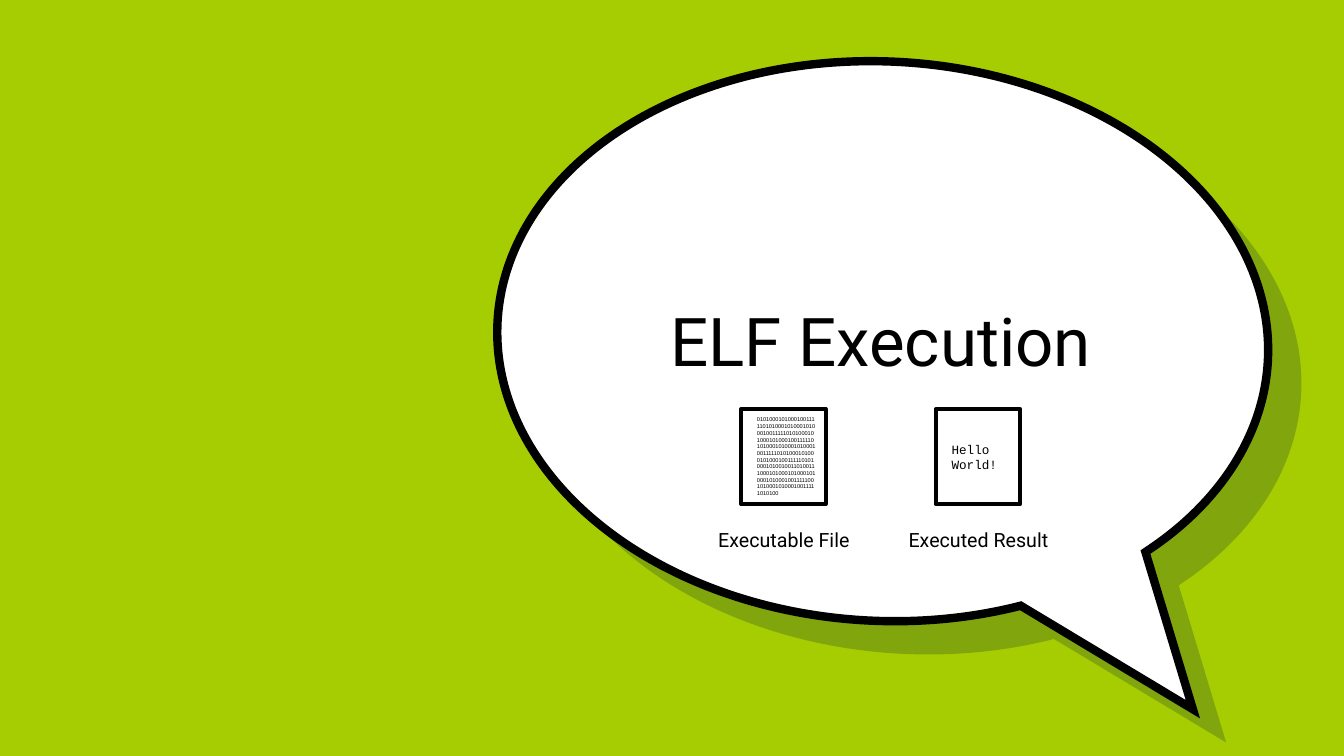
from lxml.etree import SubElement
from pptx import Presentation
from pptx.dml.color import RGBColor
from pptx.enum.shapes import MSO_SHAPE
from pptx.enum.text import MSO_ANCHOR, MSO_AUTO_SIZE, PP_ALIGN
from pptx.oxml.ns import qn
from pptx.util import Inches, Pt

COLORS = {"green": "A6CD02", "shade": "001936", "white": "FFFFFF", "black": "000000"}
BINARY = (
    "010100010100010011111010100010100010100010011111010100010100010100010011111010100010100010"
    "100010011111010100010100010100010011111010100010100100110100111000101000101000101000101000"
    "100111110010100010100010011111010100"
)
# Caption, caption left and width, frame left, frame text, text format
PANELS = [
    ("Executable File", 7.02, 1.51, 7.35, BINARY, {"name": "Arial", "size": Pt(4)}),
    ("Executed Result", 8.91, 1.59, 9.28, "Hello World!", {"name": "Courier New", "size": Pt(9)}),
]


def color(name):
    return RGBColor.from_string(COLORS[name])


def set_fill(shape, name, opacity=None):
    shape.fill.solid()
    shape.fill.fore_color.rgb = color(name)
    if opacity is not None:
        srgb = shape.fill._xPr.find(qn("a:solidFill")).find(qn("a:srgbClr"))
        SubElement(srgb, qn("a:alpha"), val=str(opacity * 1000))


def set_outline(shape, width, join):
    shape.line.color.rgb = color("black")
    shape.line.width = Pt(width)
    element = SubElement(shape.line._get_or_add_ln(), qn("a:" + join))
    if join == "miter":
        element.set("lim", "800000")


def write_text(shape, text, alignment, font_format, **frame_format):
    frame = shape.text_frame
    for name, value in frame_format.items():
        setattr(frame, name, value)
    para = frame.paragraphs[0]
    para.alignment = alignment
    span = para.add_run()
    span.text = text
    for name, value in font_format.items():
        setattr(span.font, name, value)
    span.font.color.rgb = color("black")
    return para


def add_bubble(page, left, top):
    bubble = page.shapes.add_shape(
        MSO_SHAPE.OVAL_CALLOUT, Inches(left), Inches(top), Inches(7.65), Inches(5.55))
    bubble.shadow.inherit = False
    bubble.rotation = 2.8
    bubble.adjustments[0] = 0.425
    bubble.adjustments[1] = 0.63
    return bubble


def add_title(page, text):
    title = page.shapes.title
    title.left, title.top = Inches(5.99), Inches(2.18)
    title.width, title.height = Inches(5.49), Inches(1.69)
    margins = {"margin_" + side: Inches(0.1) for side in ("left", "top", "right", "bottom")}
    write_text(title, text, PP_ALIGN.CENTER, {"name": "Roboto", "size": Pt(48)},
               vertical_anchor=MSO_ANCHOR.BOTTOM, auto_size=MSO_AUTO_SIZE.NONE,
               word_wrap=True, **margins)


def add_caption(page, text, left, width):
    box = page.shapes.add_textbox(Inches(left), Inches(5.19), Inches(width), Inches(0.34))
    write_text(box, text, PP_ALIGN.CENTER, {"name": "Roboto", "size": Pt(14)},
               word_wrap=False, auto_size=MSO_AUTO_SIZE.SHAPE_TO_FIT_TEXT)


def add_frame(page, text, left, font_format):
    box = page.shapes.add_shape(
        MSO_SHAPE.RECTANGLE, Inches(left), Inches(4.06), Inches(0.84), Inches(0.94))
    box.shadow.inherit = False
    set_fill(box, "white")
    set_outline(box, 3, "round")
    para = write_text(box, text, PP_ALIGN.LEFT, font_format,
                      vertical_anchor=MSO_ANCHOR.MIDDLE, word_wrap=True)
    properties = para._p.get_or_add_pPr()
    properties.set("marL", str(Inches(0.06)))
    properties.set("indent", "0")


def main():
    deck = Presentation()
    deck.slide_width, deck.slide_height = Inches(13.33), Inches(7.5)
    page = deck.slides.add_slide(deck.slide_layouts[5])
    page.background.fill.solid()
    page.background.fill.fore_color.rgb = color("green")

    # Speech bubble over its shade
    shade = add_bubble(page, 5.26, 0.94)
    set_fill(shade, "shade", opacity=22)
    shade.line.fill.background()
    bubble = add_bubble(page, 4.93, 0.61)
    set_fill(bubble, "white")
    set_outline(bubble, 6, "miter")

    # Title, moved in front of the bubble
    add_title(page, "ELF Execution")
    bubble._element.addnext(page.shapes.title._element)

    # Framed texts with captions
    for caption, caption_left, caption_width, frame_left, text, font_format in PANELS:
        add_caption(page, caption, caption_left, caption_width)
        add_frame(page, text, frame_left, font_format)

    deck.save("out.pptx")


if __name__ == "__main__":
    main()
